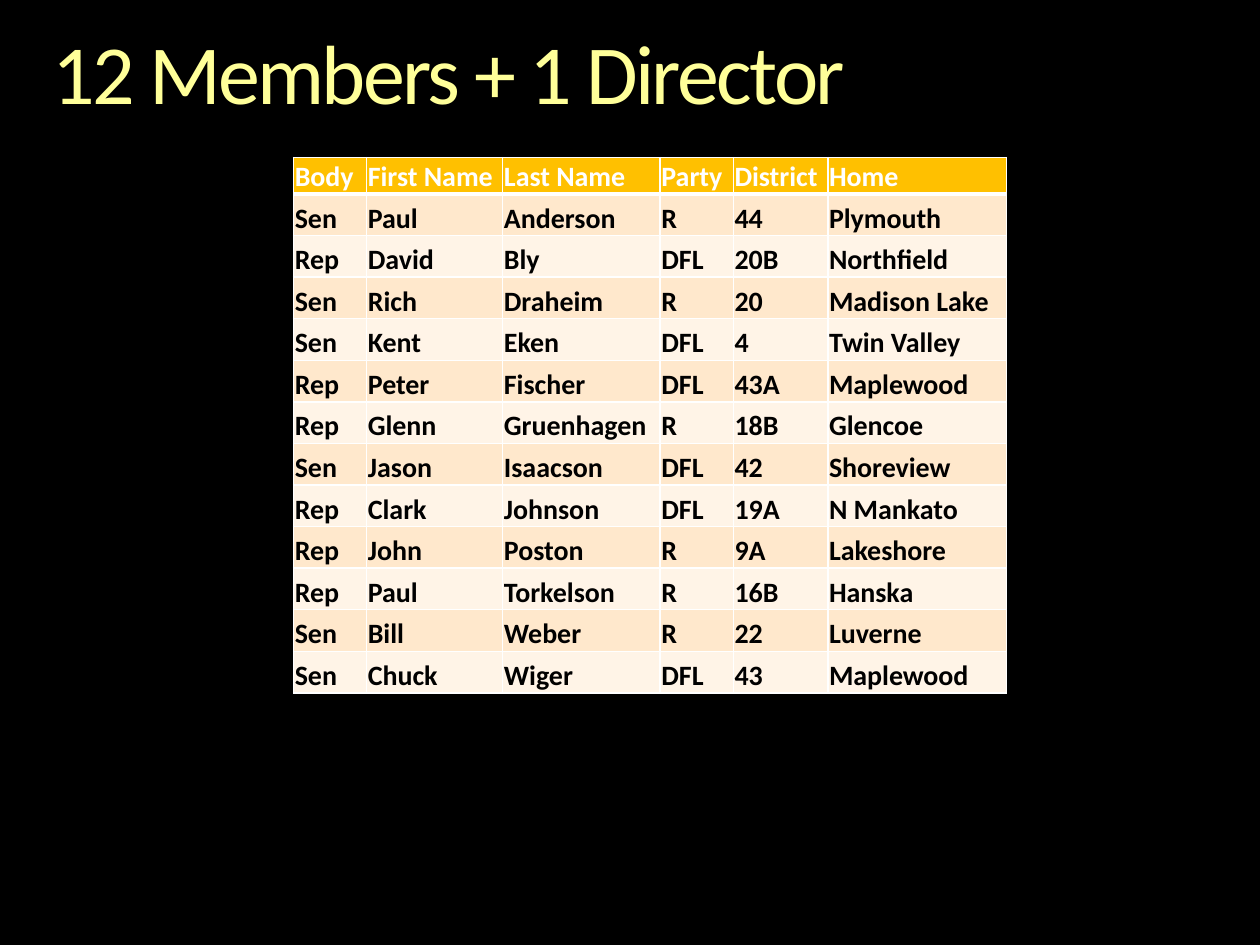
from lxml import etree
from pptx import Presentation, util as u
from pptx.dml import color
from pptx.enum import text
from pptx.oxml import ns

COLORS = {
    "background": "000000",
    "title": "FFFF99",
    "header": "FFC000",
    "odd_row": "FFE8CC",
    "even_row": "FFF4E7",
    "white": "FFFFFF",
    "black": "000000",
}

COLUMN_WIDTHS = [0.58, 1.08, 1.25, 0.58, 0.75, 1.42]
HEADER_HEIGHT, ROW_HEIGHT = 0.29, 0.33
MEMBERS = [
    ("Body", "First Name", "Last Name", "Party", "District", "Home"),
    ("Sen", "Paul", "Anderson", "R", "44", "Plymouth"),
    ("Rep", "David", "Bly", "DFL", "20B", "Northfield"),
    ("Sen", "Rich", "Draheim", "R", "20", "Madison Lake"),
    ("Sen", "Kent", "Eken", "DFL", "4", "Twin Valley"),
    ("Rep", "Peter", "Fischer", "DFL", "43A", "Maplewood"),
    ("Rep", "Glenn", "Gruenhagen", "R", "18B", "Glencoe"),
    ("Sen", "Jason", "Isaacson", "DFL", "42", "Shoreview"),
    ("Rep", "Clark", "Johnson", "DFL", "19A", "N Mankato"),
    ("Rep", "John", "Poston", "R", "9A", "Lakeshore"),
    ("Rep", "Paul", "Torkelson", "R", "16B", "Hanska"),
    ("Sen", "Bill", "Weber", "R", "22", "Luverne"),
    ("Sen", "Chuck", "Wiger", "DFL", "43", "Maplewood"),
]


class SlideBuilder:
    """Hold the style and the current slide, and add each kind of element."""

    def __init__(self, presentation, font="Calibri"):
        self.font = font
        self.slide = presentation.slides.add_slide(presentation.slide_layouts[5])
        fill = self.slide.background.fill
        fill.solid()
        fill.fore_color.rgb = self.color("background")

    def color(self, name):
        return color.RGBColor.from_string(COLORS[name])

    def format_run(self, run, size, color_name, bold=False):
        run.font.name = self.font
        run.font.size = u.Pt(size)
        run.font.bold = bold
        run.font.color.rgb = self.color(color_name)

    def title(self, wording, left, top, width, height):
        shape = self.slide.shapes.title
        shape.left, shape.top = u.Inches(left), u.Inches(top)
        shape.width, shape.height = u.Inches(width), u.Inches(height)
        frame = shape.text_frame
        frame.text = wording
        frame.word_wrap = True
        frame.auto_size = text.MSO_AUTO_SIZE.SHAPE_TO_FIT_TEXT
        frame.vertical_anchor = text.MSO_ANCHOR.TOP
        frame.margin_left = frame.margin_right = 0
        frame.margin_top = frame.margin_bottom = 0
        paragraph = frame.paragraphs[0]
        paragraph.alignment = text.PP_ALIGN.LEFT
        paragraph.line_spacing = 0.9
        run = paragraph.runs[0]
        self.format_run(run, 48, "title")
        run.font._element.set("spc", "-150")

    def borders(self, cell, top=1, bottom=1):
        properties = cell._tc.get_or_add_tcPr()
        for side, width in (("L", 1), ("R", 1), ("T", top), ("B", bottom)):
            line = etree.SubElement(properties, ns.qn(f"a:ln{side}"), w=str(u.Pt(width)))
            fill = etree.SubElement(line, ns.qn("a:solidFill"))
            etree.SubElement(fill, ns.qn("a:srgbClr"), val=COLORS["white"])

    def cell(self, cell, wording, fill_name, color_name):
        cell.fill.solid()
        cell.fill.fore_color.rgb = self.color(fill_name)
        cell.margin_left = cell.margin_right = cell.margin_top = u.Inches(0.01)
        cell.margin_bottom = 0
        cell.vertical_anchor = text.MSO_ANCHOR.BOTTOM
        cell.text_frame.text = wording
        self.format_run(cell.text_frame.paragraphs[0].runs[0], 16, color_name, bold=True)

    def table(self, rows, left, top):
        heights = [HEADER_HEIGHT] + [ROW_HEIGHT] * (len(rows) - 1)
        table = self.slide.shapes.add_table(
            len(rows), len(COLUMN_WIDTHS), u.Inches(left), u.Inches(top),
            u.Inches(sum(COLUMN_WIDTHS)), u.Inches(sum(heights))).table
        for column, width in zip(table.columns, COLUMN_WIDTHS):
            column.width = u.Inches(width)
        for index, (row, height, values) in enumerate(zip(table.rows, heights, rows)):
            row.height = u.Inches(height)
            fill_name = "header" if index == 0 else "odd_row" if index % 2 else "even_row"
            color_name = "white" if index == 0 else "black"
            for cell, wording in zip(row.cells, values):
                self.borders(cell, top=3 if index == 1 else 1, bottom=3 if index == 0 else 1)
                self.cell(cell, wording, fill_name, color_name)


def main():
    presentation = Presentation()
    presentation.slide_width, presentation.slide_height = u.Inches(10), u.Inches(7.5)
    builder = SlideBuilder(presentation)
    builder.title("12 Members + 1 Director", 0.42, 0.25, 9.17, 0.73)
    builder.table(MEMBERS, 2.33, 1.25)
    presentation.save("out.pptx")


if __name__ == "__main__":
    main()
